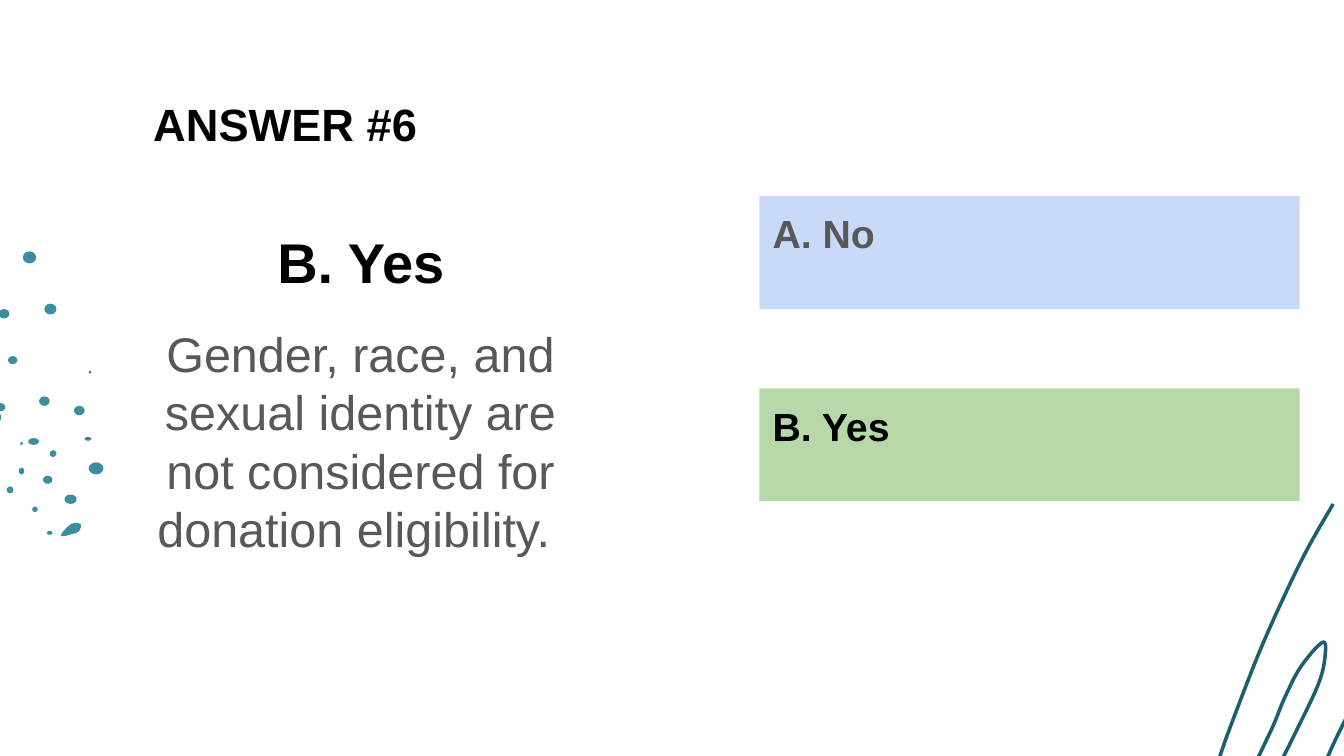
from pptx import Presentation
from pptx.dml.color import RGBColor
from pptx.enum.shapes import MSO_SHAPE
from pptx.enum.text import MSO_ANCHOR, MSO_AUTO_SIZE, PP_ALIGN
from pptx.oxml.ns import qn
from pptx.util import Inches, Pt

BLACK = RGBColor(0x00, 0x00, 0x00)
GRAY = RGBColor(0x58, 0x58, 0x58)
BLUE = RGBColor(0xC9, 0xDA, 0xF8)
GREEN = RGBColor(0xB6, 0xD7, 0xA8)
TEAL = RGBColor(0x3C, 0x8D, 0xA0)
DARK_TEAL = RGBColor(0x1C, 0x5F, 0x6F)


def write_text(paragraph, text, size, color=BLACK, bold=True,
               align=PP_ALIGN.LEFT, before=0):
    properties = paragraph._p.get_or_add_pPr()
    properties.set("marL", "0")
    properties.set("indent", "0")
    properties.append(properties.makeelement(qn("a:buNone"), {}))
    paragraph.alignment = align
    paragraph.space_before = Pt(before)
    paragraph.line_spacing = 1.0
    run = paragraph.add_run()
    run.text = text
    run.font.name = "Arial"
    run.font.size = Pt(size)
    run.font.bold = bold
    run.font.color.rgb = color


def add_curve(shapes, points, close=False, steps=8):
    """Draw a smooth Catmull-Rom curve through points given in inches."""
    ends = (points[-1], points[0], points[1]) if close else (points[0], points[-1], points[-1])
    padded = [ends[0], *points, *ends[1:]]
    samples = []
    for a, b, c, d in zip(padded, padded[1:], padded[2:], padded[3:]):
        for step in range(steps):
            t = step / steps
            samples.append([
                Inches((2 * q + (r - p) * t + (2 * p - 5 * q + 4 * r - s) * t**2
                        + (3 * q - p - 3 * r + s) * t**3) / 2)
                for p, q, r, s in zip(a, b, c, d)])
    builder = shapes.build_freeform(*samples[0], scale=1.0)
    builder.add_line_segments(samples[1:], close=close)
    curve = builder.convert_to_shape()
    curve.shadow.inherit = False
    return curve


# Widescreen slide, 16:9
presentation = Presentation()
presentation.slide_width = Inches(10)
presentation.slide_height = Inches(10 * 9 / 16)
slide = presentation.slides.add_slide(presentation.slide_layouts[1])
shapes = slide.shapes

# Paint dots at the left edge: left, top, width, height
dots = [
    (-0.12, 3.05, 0.13, 0.11), (0.15, 3.29, 0.02, 0.02), (0.14, 3.48, 0.04, 0.05),
    (0.24, 3.77, 0.04, 0.04), (0.35, 3.95, 0.04, 0.03), (0.48, 3.68, 0.09, 0.07),
    (0.32, 3.54, 0.07, 0.06), (0.05, 3.62, 0.05, 0.05), (0.37, 3.35, 0.05, 0.05),
    (0.21, 3.26, 0.08, 0.05), (0.29, 2.95, 0.08, 0.07), (-0.03, 3.0, 0.07, 0.06),
    (0.06, 2.65, 0.07, 0.06), (-0.01, 2.3, 0.08, 0.07), (0.66, 2.76, 0.02, 0.02),
    (0.55, 3.02, 0.08, 0.07), (0.63, 3.25, 0.05, 0.03), (0.66, 3.44, 0.11, 0.09),
    (0.33, 2.26, 0.09, 0.08), (0.17, 1.87, 0.1, 0.09),
]
for bounds in dots:
    dot = shapes.add_shape(MSO_SHAPE.OVAL, *map(Inches, bounds))
    dot.shadow.inherit = False
    dot.fill.solid()
    dot.fill.fore_color.rgb = TEAL
    dot.line.fill.background()

# Paint drop below the dots
drop = add_curve(shapes, [(0.53, 3.9), (0.6, 3.9), (0.59, 3.95), (0.55, 3.97),
                          (0.47, 3.99), (0.46, 3.97)], close=True)
drop.fill.solid()
drop.fill.fore_color.rgb = TEAL
drop.line.fill.background()

# Scribble running off the lower right corner
scribble = add_curve(shapes, [
    (9.92, 3.75), (9.72, 4.1), (9.54, 4.47), (9.38, 4.83), (9.23, 5.21), (9.1, 5.56),
    (9.06, 5.72), (9.1, 5.85), (9.19, 5.87), (9.28, 5.79), (9.46, 5.43), (9.56, 5.19),
    (9.68, 4.96), (9.84, 4.78), (9.86, 4.88), (9.81, 5.09), (9.64, 5.45), (9.45, 5.83),
    (9.36, 6.01), (9.3, 6.16), (9.32, 6.36), (9.45, 6.38), (9.57, 6.29), (9.75, 5.94),
    (9.92, 5.54), (10.1, 5.2), (10.3, 4.95), (10.39, 4.88), (10.42, 5.02), (10.27, 5.5),
    (10.08, 5.82), (9.9, 6.16), (9.75, 6.52), (9.73, 6.67), (9.82, 6.71), (9.96, 6.57),
    (10.14, 6.2), (10.3, 5.82), (10.6, 5.29), (10.8, 5.2), (10.84, 5.35), (10.77, 5.6),
    (10.41, 6.26), (10.2, 6.59), (10.09, 6.85), (10.2, 6.98), (10.43, 6.84), (10.75, 6.2),
    (11.01, 5.65),
])
scribble.fill.background()
scribble.line.color.rgb = DARK_TEAL
scribble.line.width = Pt(1.9)

# Title and explanation
title = shapes.title
body = slide.placeholders[1]
for placeholder, bounds, anchor in (
        (title, (1.04, 0.6, 8.92, 0.63), MSO_ANCHOR.MIDDLE),
        (body, (0.89, 1.59, 3.59, 3.84), MSO_ANCHOR.TOP)):
    placeholder.left, placeholder.top, placeholder.width, placeholder.height = map(Inches, bounds)
    frame = placeholder.text_frame
    frame.auto_size = MSO_AUTO_SIZE.NONE
    frame.vertical_anchor = anchor
    frame.margin_left = frame.margin_right = Inches(0.1)
    frame.margin_top = frame.margin_bottom = Inches(0.1)

write_text(title.text_frame.paragraphs[0], "ANSWER #6", size=24.2)
write_text(body.text_frame.paragraphs[0], "B. Yes", size=30, align=PP_ALIGN.CENTER)
write_text(body.text_frame.add_paragraph(),
           "Gender, race, and sexual identity are not considered for donation eligibility. ",
           size=26, color=GRAY, bold=False, align=PP_ALIGN.CENTER, before=16)

# Answer options
options = [("A. No", 1.46, BLUE, GRAY), ("B. Yes", 2.89, GREEN, BLACK)]
for text, top, fill_color, text_color in options:
    panel = shapes.add_shape(MSO_SHAPE.RECTANGLE, Inches(5.65), Inches(top),
                             Inches(4.02), Inches(0.84))
    panel.shadow.inherit = False
    panel.fill.solid()
    panel.fill.fore_color.rgb = fill_color
    panel.line.fill.background()
    label = shapes.add_textbox(Inches(5.65), Inches(top), Inches(4.02), Inches(0.52))
    frame = label.text_frame
    frame.word_wrap = True
    frame.auto_size = MSO_AUTO_SIZE.SHAPE_TO_FIT_TEXT
    frame.margin_left = frame.margin_right = Inches(0.1)
    frame.margin_top = frame.margin_bottom = Inches(0.1)
    write_text(frame.paragraphs[0], text, size=21, color=text_color)

presentation.save("out.pptx")
